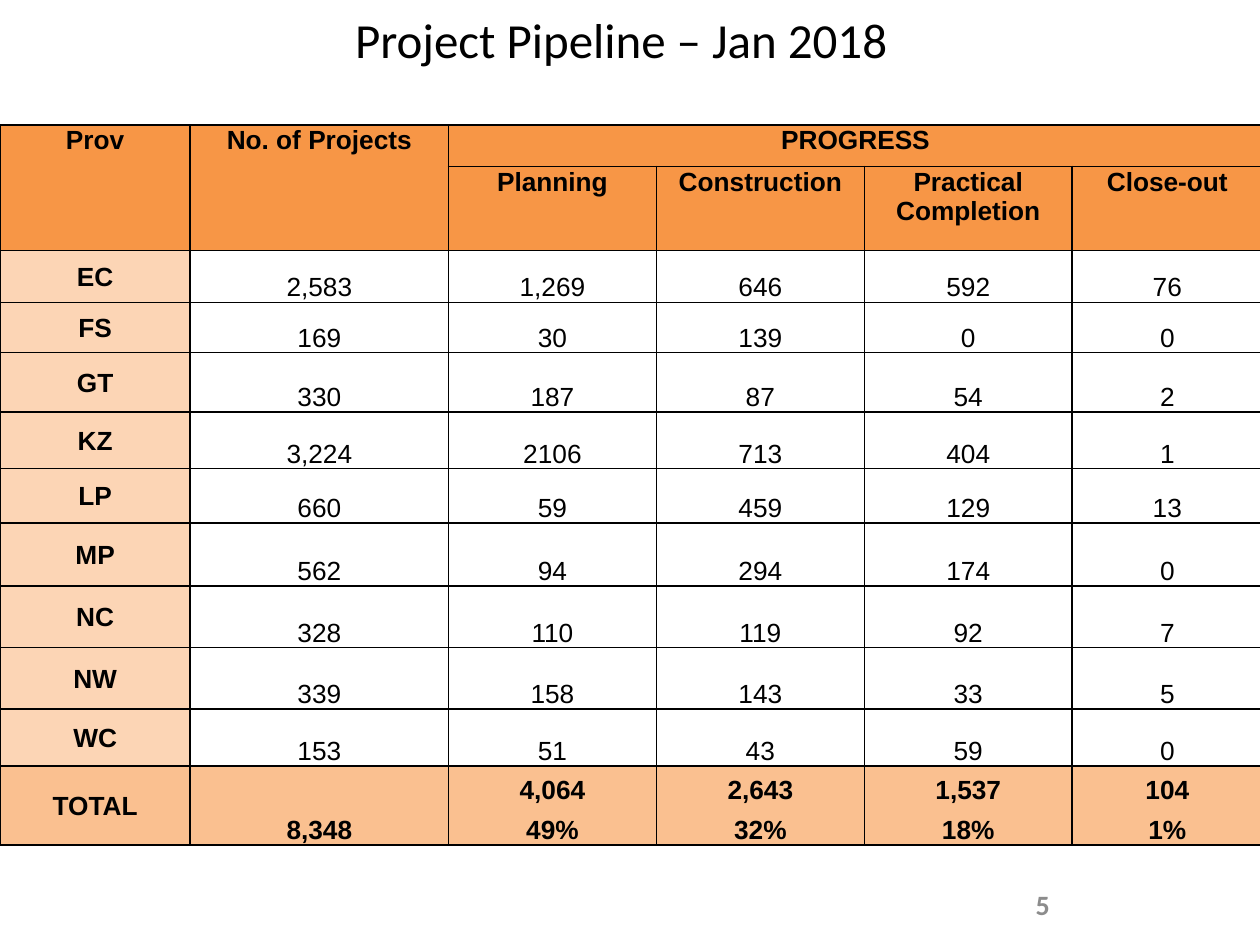
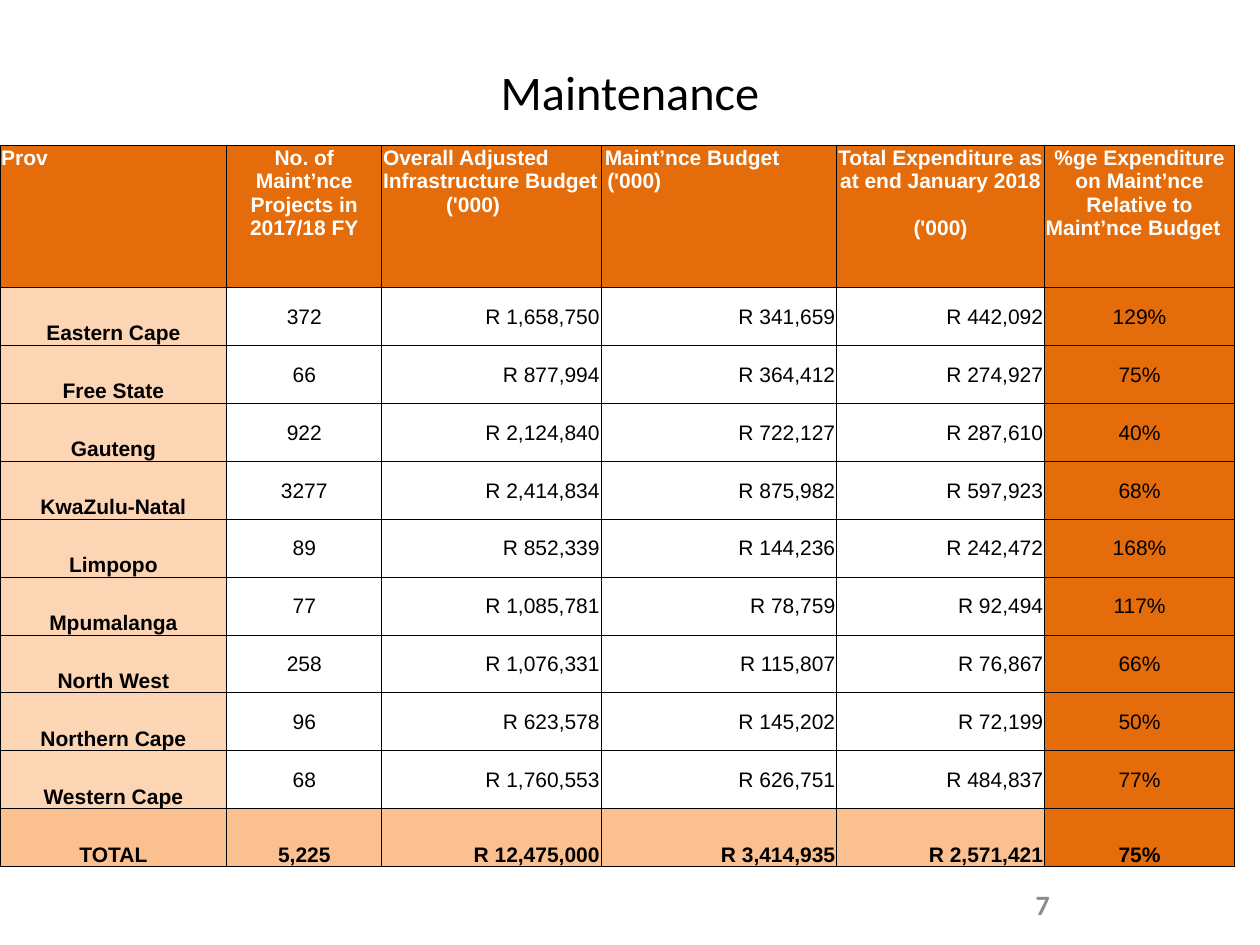
import pptx
import pptx.util
import pptx.dml.color
import pptx.enum.text
import lxml.etree

Inches, Pt = pptx.util.Inches, pptx.util.Pt
ALIGN = {"l": pptx.enum.text.PP_ALIGN.LEFT, "c": pptx.enum.text.PP_ALIGN.CENTER,
         "r": pptx.enum.text.PP_ALIGN.RIGHT}
ANCHOR = {"t": pptx.enum.text.MSO_ANCHOR.TOP, "m": pptx.enum.text.MSO_ANCHOR.MIDDLE,
          "b": pptx.enum.text.MSO_ANCHOR.BOTTOM}

# Shared colours
BLACK, WHITE, GREY = "000000", "FFFFFF", "8C8C8C"
ORANGE, DARK, PALE, PEACH = "F79646", "E46C0A", "FCD5B5", "FAC090"

# Content: project pipeline
STAGES = [
    ("Prov", "No. of Projects", "PROGRESS", "", "", ""),
    ("", "", "Planning", "Construction", "Practical Completion", "Close-out"),
    ("EC", "2,583", "1,269", "646", "592", "76"),
    ("FS", "169", "30", "139", "0", "0"),
    ("GT", "330", "187", "87", "54", "2"),
    ("KZ", "3,224", "2106", "713", "404", "1"),
    ("LP", "660", "59", "459", "129", "13"),
    ("MP", "562", "94", "294", "174", "0"),
    ("NC", "328", "110", "119", "92", "7"),
    ("NW", "339", "158", "143", "33", "5"),
    ("WC", "153", "51", "43", "59", "0"),
    ("TOTAL", "8,348", "4,064", "2,643", "1,537", "104"),
    ("", "", "49%", "32%", "18%", "1%"),
]

# Content: maintenance; a header cell may list (text, format) lines
COSTS = [
    ([("Prov", {"align": "l"})],
     "No. of Maint’nce Projects in 2017/18 FY",
     [("Overall Adjusted Infrastructure Budget", {"align": "l"}),
      ("('000)", {"align": "l", "indent": 0.5})],
     [("Maint’nce Budget", {"align": "l", "indent": 0.02}),
      ("('000)", {"align": "l", "indent": 0.04})],
     ["Total Expenditure as at end January 2018", ("('000)", {"before": 13.5})],
     ["%ge Expenditure on Maint’nce Relative to",
      ("Maint’nce Budget", {"align": "l"})]),
    ("Eastern Cape", "372", "R 1,658,750", "R 341,659", "R 442,092", "129%"),
    ("Free State", "66", "R 877,994", "R 364,412", "R 274,927", "75%"),
    ("Gauteng", "922", "R 2,124,840", "R 722,127", "R 287,610", "40%"),
    ("KwaZulu-Natal", "3277", "R 2,414,834", "R 875,982", "R 597,923", "68%"),
    ("Limpopo", "89", "R 852,339", "R 144,236", "R 242,472", "168%"),
    ("Mpumalanga", "77", "R 1,085,781", "R 78,759", "R 92,494", "117%"),
    ("North West", "258", "R 1,076,331", "R 115,807", "R 76,867", "66%"),
    ("Northern Cape", "96", "R 623,578", "R 145,202", "R 72,199", "50%"),
    ("Western Cape", "68", "R 1,760,553", "R 626,751", "R 484,837", "77%"),
    ("TOTAL", "5,225", "R 12,475,000", "R 3,414,935", "R 2,571,421", "75%"),
]

# Layout of each slide; head and total count rows, merge holds cell corners
SLIDES = [
    dict(title="Project Pipeline – Jan 2018", box=(0.43, 0.04, 9, 0.54), size=28,
         page="5", rows=STAGES, top=0.99, head=2, total=2,
         cols=(1.51, 2.05, 1.65, 1.65, 1.65, 1.51),
         tall=(0.33, 0.67, 0.41, 0.4, 0.47, 0.45, 0.43, 0.5, 0.49, 0.49, 0.45, 0.31, 0.32),
         merge=[(0, 0, 1, 0), (0, 1, 1, 1), (0, 2, 0, 5), (11, 0, 12, 0), (11, 1, 12, 1)],
         font=15, line=1, fill=ORANGE, ink=BLACK, name="m", data="b", sum="m",
         right=(), dark=None),
    dict(title="Maintenance", box=(0.5, 0.3, 9, 0.85), size=27.6,
         page="7", rows=COSTS, top=1.15, head=1, total=1,
         cols=(1.8, 1.23, 1.74, 1.87, 1.65, 1.51), tall=(1.13,) + (0.46,) * 10,
         merge=[], font=12, line=0.5, fill=DARK, ink=WHITE, name="b", data="m", sum="b",
         right=(2, 3, 4), dark=5),
]


def paint(hue):
    return pptx.dml.color.RGBColor.from_string(hue)


def write(frame, text, size=12, font="Arial", hue=BLACK, bold=False, align="c"):
    """Fill a frame with one text, or with a list of texts and (text, format)."""
    frame.word_wrap = True
    lines = [text] if isinstance(text, str) else text
    for i, line in enumerate(lines):
        words, form = (line, {}) if isinstance(line, str) else line
        para = frame.paragraphs[0] if i == 0 else frame.add_paragraph()
        para.alignment = ALIGN[form.get("align", align)]
        para.space_before = Pt(form.get("before", 0))
        if "indent" in form:
            para._p.get_or_add_pPr().set("marL", str(Inches(form["indent"])))
        run = para.add_run()
        run.text = words
        run.font.size, run.font.name, run.font.bold = Pt(size), font, bold
        run.font.color.rgb = paint(hue)


def edge(cell, width, skip):
    """Draw black cell borders, leaving out the sides in skip."""
    props = cell._tc.get_or_add_tcPr()
    space = props.nsmap["a"]
    for side in "LRTB":
        line = lxml.etree.SubElement(props, f"{{{space}}}ln{side}", w=str(Pt(width)))
        if side in skip:
            lxml.etree.SubElement(line, f"{{{space}}}noFill")
        else:
            solid = lxml.etree.SubElement(line, f"{{{space}}}solidFill")
            lxml.etree.SubElement(solid, f"{{{space}}}srgbClr", val=BLACK)


def style(spec_, r, c):
    """Give fill, text format, anchor and open sides by a cell's place."""
    count = len(spec_["rows"])
    first = count - spec_["total"]
    align = "r" if c in spec_["right"] else "c"
    if r < spec_["head"]:
        return spec_["fill"], dict(hue=spec_["ink"], bold=True), "t", ""
    if r >= first:
        fill = DARK if c == spec_["dark"] else PEACH
        gap = ("B" if r < count - 1 else "") + ("T" if r > first else "")
        return (fill, dict(bold=True, align=align),
                spec_["sum"] if c == 0 else "b", gap if c > 1 else "")
    if c == 0:
        return PALE, dict(bold=True), spec_["name"], ""
    return DARK if c == spec_["dark"] else None, dict(align=align), spec_["data"], ""


def grid(slide, plan):
    rows, cols, tall = plan["rows"], plan["cols"], plan["tall"]
    frame = slide.shapes.add_table(len(rows), len(cols), 0, Inches(plan["top"]),
                                   Inches(sum(cols)), Inches(sum(tall)))
    table = frame.table
    table.first_row = table.horz_banding = False
    for col, wide in zip(table.columns, cols):
        col.width = Inches(wide)
    for row, high in zip(table.rows, tall):
        row.height = Inches(high)
    for r1, c1, r2, c2 in plan["merge"]:
        table.cell(r1, c1).merge(table.cell(r2, c2))
    for r, row in enumerate(rows):
        for c, text in enumerate(row):
            cell = table.cell(r, c)
            fill, form, anchor, skip = style(plan, r, c)
            edge(cell, plan["line"], skip)
            cell.margin_left = cell.margin_right = cell.margin_top = Inches(0.01)
            cell.margin_bottom = 0
            cell.vertical_anchor = ANCHOR[anchor]
            if fill:
                cell.fill.solid()
                cell.fill.fore_color.rgb = paint(fill)
            else:
                cell.fill.background()
            if text:
                write(cell.text_frame, text, size=plan["font"], **form)


def main():
    deck = pptx.Presentation()
    deck.slide_width, deck.slide_height = Inches(10), Inches(7.5)
    for plan in SLIDES:
        slide = deck.slides.add_slide(deck.slide_layouts[5])
        # Title
        title = slide.shapes.title
        title.left, title.top, title.width, title.height = map(Inches, plan["box"])
        title.text_frame.vertical_anchor = ANCHOR["m"]
        write(title.text_frame, plan["title"], size=plan["size"], font="Calibri")
        # Page number
        page = slide.shapes.add_textbox(*map(Inches, (6.1, 6.98, 2.33, 0.4)))
        page.text_frame.vertical_anchor = ANCHOR["m"]
        write(page.text_frame, plan["page"], size=16, font="Calibri", hue=GREY,
              bold=True, align="r")
        # Table
        grid(slide, plan)
    deck.save("out.pptx")


if __name__ == "__main__":
    main()
